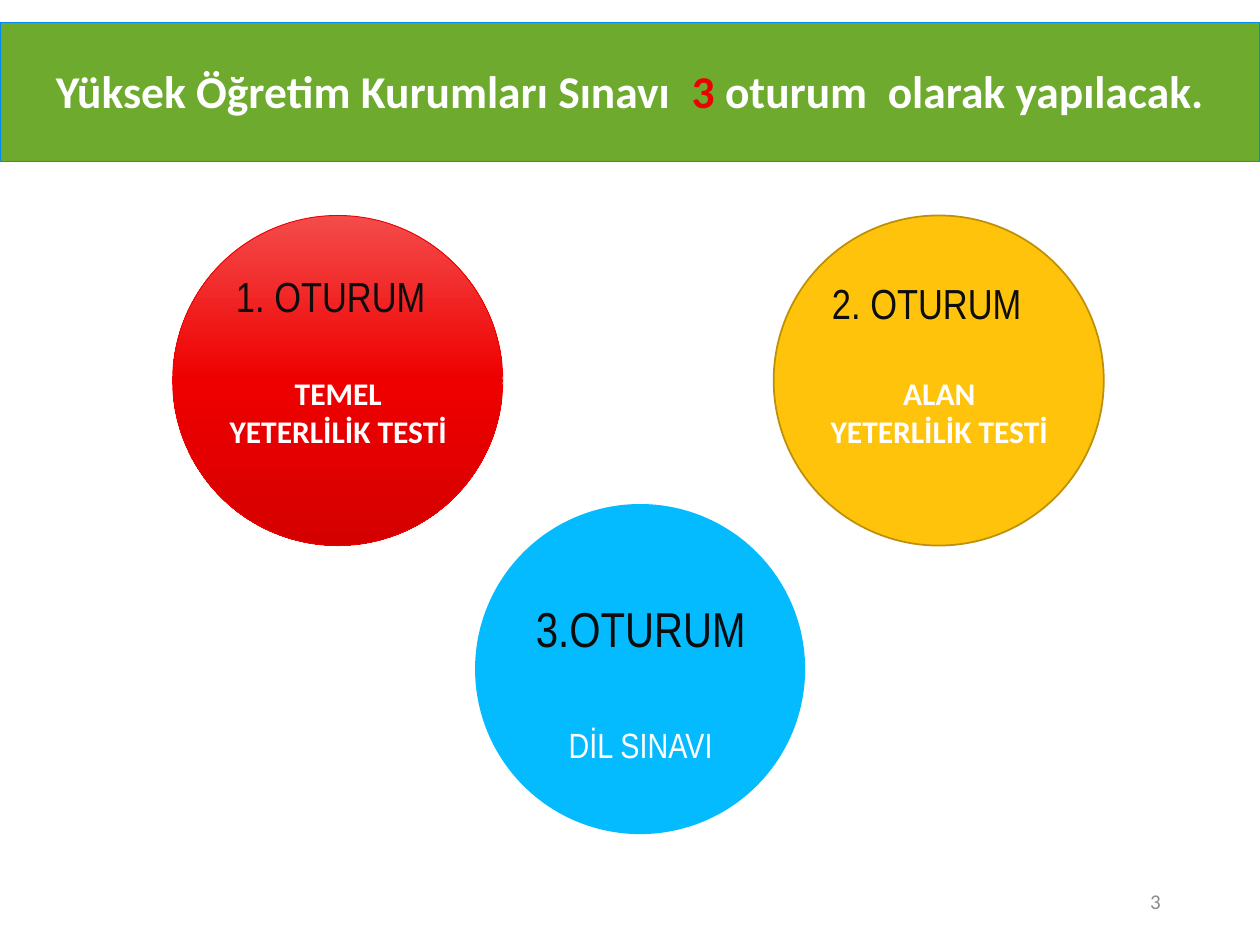
"""Build the slide that presents the three exam sessions."""
from copy import deepcopy
from dataclasses import dataclass
from typing import Optional

from pptx import Presentation
from pptx.dml.color import RGBColor
from pptx.enum.shapes import MSO_SHAPE
from pptx.enum.text import MSO_ANCHOR, MSO_AUTO_SIZE, PP_ALIGN
from pptx.oxml.ns import qn
from pptx.util import Emu, Inches, Pt

COLS, ROWS = 100, 75
WIDE, HIGH = Inches(10), Inches(7.5)


@dataclass(frozen=True)
class Theme:
    """Colours, fonts and type sizes of the slide."""
    green: str = "6DAA2D"
    edge: str = "008BEF"
    red: str = "EF0000"
    glow: tuple = ("F44B4B", "EF0000", "D40000")
    gold: str = "FFC30B"
    rim: str = "BD9008"
    blue: str = "05BBFF"
    ink: str = "0D0D0D"
    white: str = "FFFFFF"
    gray: str = "8C8C8C"
    sans: str = "Calibri"
    slim: str = "Arial Narrow"
    head: int = 26
    large: int = 28
    label: int = 24
    small: int = 20
    body: int = 18
    foot: int = 12


@dataclass(frozen=True)
class Box:
    """Place and size in grid columns and rows."""
    col: float
    row: float
    wide: float
    high: float

    def spot(self) -> tuple:
        """Return left, top, width and height as lengths."""
        across, down = WIDE / COLS, HIGH / ROWS
        return (Emu(int(self.col * across)), Emu(int(self.row * down)),
                Emu(int(self.wide * across)), Emu(int(self.high * down)))


@dataclass(frozen=True)
class Line:
    """One paragraph of text with its look."""
    text: str
    size: int
    font: str
    tint: str
    bold: bool = False
    gap: float = 0


@dataclass(frozen=True)
class Note:
    """A text box with its lines."""
    box: Box
    lines: tuple
    inset: float = 0.05


@dataclass(frozen=True)
class Disc:
    """A session circle with its notes."""
    col: float
    row: float
    fill: tuple
    notes: tuple
    edge: Optional[str] = None
    width: float = 0


THEME = Theme()
SIZE = 26.2
SPAN = 19.3


def style(run, size: int, font: str, tint: str, bold: bool) -> None:
    """Format one run."""
    run.font.size, run.font.name, run.font.bold = Pt(size), font, bold
    run.font.color.rgb = RGBColor.from_string(tint)


def paint(shape, fill: tuple, edge: Optional[str], width: float) -> None:
    """Fill a shape with one colour or an even gradient and set its edge."""
    shape.shadow.inherit = False
    if len(fill) == 1:
        shape.fill.solid()
        shape.fill.fore_color.rgb = RGBColor.from_string(fill[0])
    else:
        shape.fill.gradient()
        shape.fill.gradient_angle = 270
        stops = shape._element.spPr.find(qn("a:gradFill")).find(qn("a:gsLst"))
        while len(stops) < len(fill):
            stops.append(deepcopy(stops[0]))
        for rank, (stop, tint) in enumerate(zip(shape.fill.gradient_stops, fill)):
            stop.position = rank / (len(fill) - 1)
            stop.color.rgb = RGBColor.from_string(tint)
    if edge:
        shape.line.color.rgb = RGBColor.from_string(edge)
        shape.line.width = Pt(width)
    else:
        shape.line.fill.background()


def write(slide, note: Note, align=PP_ALIGN.CENTER, anchor=MSO_ANCHOR.TOP) -> None:
    """Add a text box."""
    frame = slide.shapes.add_textbox(*note.box.spot()).text_frame
    frame.word_wrap, frame.vertical_anchor = True, anchor
    frame.margin_top = Inches(note.inset)
    frame.text = "\n".join(line.text for line in note.lines)
    for para, line in zip(frame.paragraphs, note.lines):
        para.alignment, para.space_before = align, Pt(line.gap)
        style(para.runs[0], line.size, line.font, line.tint, line.bold)


def draw(slide, disc: Disc) -> None:
    """Add a circle and its notes."""
    box = Box(disc.col, disc.row, SIZE, SIZE)
    shape = slide.shapes.add_shape(MSO_SHAPE.OVAL, *box.spot())
    paint(shape, disc.fill, disc.edge, disc.width)
    for note in disc.notes:
        write(slide, note)


def banner(slide) -> None:
    """Set the title over its green band."""
    band = slide.shapes.add_shape(MSO_SHAPE.RECTANGLE, *Box(0, 1.8, COLS, 11).spot())
    paint(band, (THEME.green,), THEME.edge, 0.5)
    title = slide.shapes.title
    band._element.addnext(title._element)
    title.left, title.top, title.width, title.height = Box(0, 4.5, COLS, 9.8).spot()
    frame = title.text_frame
    frame.word_wrap, frame.auto_size = True, MSO_AUTO_SIZE.NONE
    frame.vertical_anchor = MSO_ANCHOR.TOP
    para = frame.paragraphs[0]
    para.alignment = PP_ALIGN.CENTER
    for text, tint in (("Yüksek Öğretim Kurumları Sınavı  ", THEME.white),
                       ("3", THEME.red),
                       (" oturum  olarak yapılacak.", THEME.white)):
        run = para.add_run()
        run.text = text
        style(run, THEME.head, THEME.sans, tint, True)


def label(col: float, row: float, text: str) -> Note:
    """Describe a session label."""
    return Note(Box(col, row, SPAN, 5),
                (Line(text, THEME.label, THEME.slim, THEME.ink),))


def test(col: float, text: str) -> Note:
    """Describe the name of a test."""
    return Note(Box(col, 29.2, SPAN, 7.1),
                (Line(text, THEME.body, THEME.sans, THEME.white, True),))


def main() -> None:
    """Build and save the slide."""
    deck = Presentation()
    deck.slide_width, deck.slide_height = WIDE, HIGH
    slide = deck.slides.add_slide(deck.slide_layouts[5])
    banner(slide)
    third = Note(Box(41.2, 42.1, SPAN, 19.2), (
        Line("3.OTURUM", THEME.large, THEME.slim, THEME.ink),
        Line("DİL SINAVI", THEME.small, THEME.slim, THEME.white, gap=38)), 0.54)
    discs = (
        Disc(61.4, 17.1, (THEME.gold,),
             (label(63.9, 21.5, "2. OTURUM"), test(64.9, "ALAN YETERLİLİK TESTİ")),
             THEME.rim, 1),
        Disc(37.7, 40, (THEME.blue,), (third,)),
        Disc(13.7, 17.1, THEME.glow,
             (test(17.2, "TEMEL YETERLİLİK TESTİ"), label(16.6, 21, "1. OTURUM")),
             THEME.red, 0.5))
    for disc in discs:
        draw(slide, disc)
    page = Line("3", THEME.foot, THEME.sans, THEME.gray)
    write(slide, Note(Box(70.6, 69.5, 22.5, 4), (page,)),
          PP_ALIGN.RIGHT, MSO_ANCHOR.MIDDLE)
    deck.save("out.pptx")


if __name__ == "__main__":
    main()
